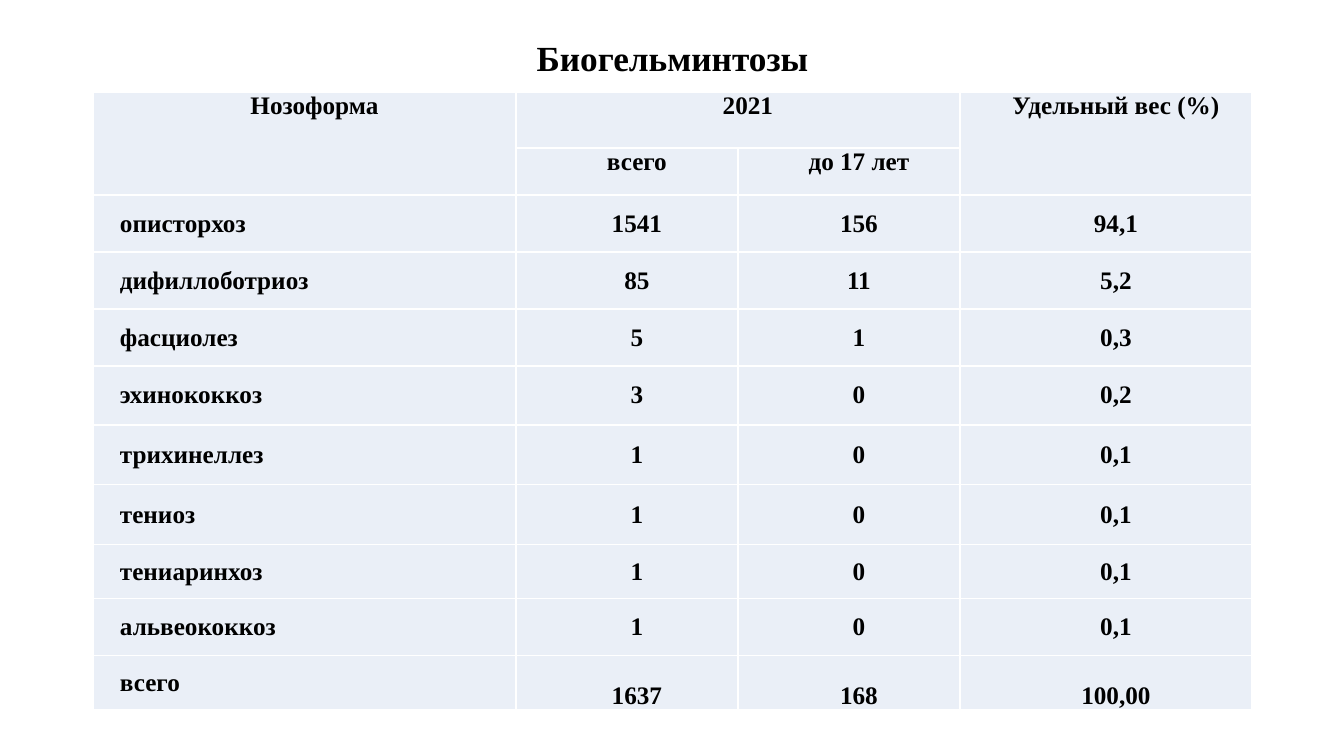
from lxml import etree
from pptx import Presentation
from pptx.dml.color import RGBColor
from pptx.enum.text import MSO_ANCHOR, PP_ALIGN
from pptx.oxml.ns import qn
from pptx.util import Pt

TOP, MIDDLE, BOTTOM = MSO_ANCHOR.TOP, MSO_ANCHOR.MIDDLE, MSO_ANCHOR.BOTTOM
CENTER, JUSTIFY = PP_ALIGN.CENTER, PP_ALIGN.JUSTIFY
BLACK = RGBColor(0x00, 0x00, 0x00)
WHITE = RGBColor(0xFF, 0xFF, 0xFF)
PALE_BLUE = RGBColor(0xEA, 0xEF, 0xF7)
FONT = "Times New Roman"


def px(n):
    return round(n * 914400 / 100.8)


def style(paragraph, size, align):
    paragraph.alignment = align
    font = paragraph.font
    font.name, font.size, font.bold = FONT, Pt(size), True
    font.color.rgb = BLACK


prs = Presentation()
prs.slide_width, prs.slide_height = px(1344), px(756)
slide = prs.slides.add_slide(prs.slide_layouts[6])

# Title
title = slide.shapes.add_textbox(px(93), px(40), px(1159), px(75)).text_frame
title.word_wrap = True
title.vertical_anchor = TOP
title.margin_top = px(1)
title.text = "Биогельминтозы"
style(title.paragraphs[0], 25.2, CENTER)
title.paragraphs[0].line_spacing = 0.9

# Table content
rows = [
    ["Нозоформа", "2021", "", "Удельный вес (%)"],
    ["", "всего", "до 17 лет", ""],
    ["описторхоз", "1541", "156", "94,1"],
    ["дифиллоботриоз", "85", "11", "5,2"],
    ["фасциолез", "5", "1", "0,3"],
    ["эхинококкоз", "3", "0", "0,2"],
    ["трихинеллез", "1", "0", "0,1"],
    ["тениоз", "1", "0", "0,1"],
    ["тениаринхоз", "1", "0", "0,1"],
    ["альвеококкоз", "1", "0", "0,1"],
    ["всего", "1637", "168", "100,00"],
]
column_widths = [423, 222, 222, 292]
row_heights = [56, 47, 57, 57, 57, 59, 60, 60, 54, 57, 54]
header_rows, total_row = 2, len(rows) - 1

# Table grid
table = slide.shapes.add_table(
    len(rows), len(column_widths), px(93), px(92),
    px(sum(column_widths)), px(sum(row_heights))).table
table.first_row = table.horz_banding = False
for column, width in zip(table.columns, column_widths):
    column.width = px(width)
for row, height in zip(table.rows, row_heights):
    row.height = px(height)

# Cells
for r, texts in enumerate(rows):
    for c, text in enumerate(texts):
        cell = table.cell(r, c)
        cell.text = text
        cell.margin_left = cell.margin_right = px(7)
        cell.margin_top = cell.margin_bottom = 0
        if r < header_rows:
            cell.vertical_anchor = TOP
        elif r == total_row and c > 0:
            cell.vertical_anchor = BOTTOM
        else:
            cell.vertical_anchor = MIDDLE
        paragraph = cell.text_frame.paragraphs[0]
        style(paragraph, 18, JUSTIFY if c == 0 and r >= header_rows else CENTER)
        p_pr = paragraph._p.get_or_add_pPr()
        p_pr.set("marL", "0")
        p_pr.set("indent", str(px(20)))
        cell.fill.solid()
        cell.fill.fore_color.rgb = PALE_BLUE
        # White borders go ahead of the fill
        tc_pr = cell._tc.get_or_add_tcPr()
        for i, side in enumerate(("a:lnL", "a:lnR", "a:lnT", "a:lnB")):
            border = etree.Element(qn(side), w=str(Pt(1)))
            line_fill = etree.SubElement(border, qn("a:solidFill"))
            etree.SubElement(line_fill, qn("a:srgbClr"), val=str(WHITE))
            tc_pr.insert(i, border)

# Header spans
for first, last in (((0, 0), (1, 0)), ((0, 1), (0, 2)), ((0, 3), (1, 3))):
    table.cell(*first).merge(table.cell(*last))

prs.save("out.pptx")
